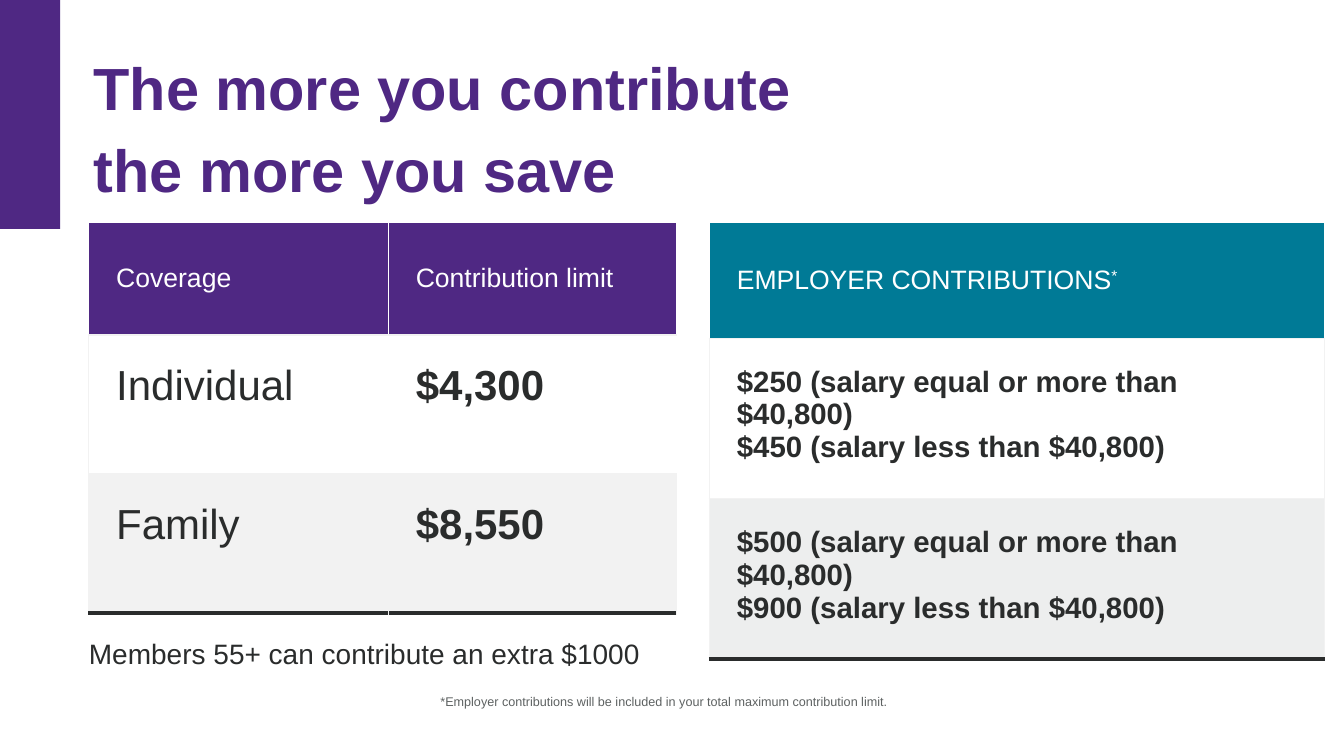
from dataclasses import dataclass

from lxml import etree
from pptx import Presentation
from pptx.dml.color import RGBColor
from pptx.enum.shapes import MSO_SHAPE
from pptx.enum.text import MSO_ANCHOR
from pptx.oxml.ns import qn
from pptx.util import Cm, Pt

RECT = MSO_SHAPE.RECTANGLE
TOP = MSO_ANCHOR.TOP
MIDDLE = MSO_ANCHOR.MIDDLE


@dataclass(frozen=True)
class Theme:
    font: str = "Arial"
    purple: str = "4F2883"
    teal: str = "007A96"
    white: str = "FFFFFF"
    pale: str = "F2F2F2"
    mist: str = "EDEEEE"
    ink: str = "2A2C2C"
    gray: str = "5E6262"
    title: float = 42.5
    large: float = 30
    medium: float = 21
    note: float = 20
    head: float = 19
    small: float = 9


THEME = Theme()


def style(frame, size, color, bold=False):
    for para in frame.paragraphs:
        for run in para.runs:
            font = run.font
            font.name = THEME.font
            font.size = Pt(size)
            font.bold = bold
            font.color.rgb = RGBColor.from_string(color)


def add_bar(slide, width, height):
    bar = slide.shapes.add_shape(RECT, 0, 0, Cm(width), Cm(height))
    bar.shadow.inherit = False
    bar.fill.solid()
    bar.fill.fore_color.rgb = RGBColor.from_string(THEME.purple)
    bar.line.fill.background()


def add_text(slide, box, text, size, color, pads, bold=False, lines=1.0):
    """Add a text box; box is left, top, width, height and pads are side, top."""
    frame = slide.shapes.add_textbox(*map(Cm, box)).text_frame
    frame.word_wrap = True
    frame.margin_left = frame.margin_right = Cm(pads[0])
    frame.margin_top = frame.margin_bottom = Cm(pads[1])
    frame.text = text
    frame.paragraphs[0].line_spacing = lines
    style(frame, size, color, bold)


def add_edge(cell, side, color, width=1):
    props = cell._tc.get_or_add_tcPr()
    line = etree.SubElement(props, qn(f"a:ln{side}"), w=str(Pt(width)))
    fill = etree.SubElement(line, qn("a:solidFill"))
    etree.SubElement(fill, qn("a:srgbClr"), val=color)


def fill_cell(cell, text, fill, edges, anchor):
    """Set text, fill and edges; edges are (side, color, width) in L, R, T, B order."""
    cell.text_frame.text = text
    cell.vertical_anchor = anchor
    cell.margin_left = cell.margin_right = Cm(0.69)
    cell.margin_top = cell.margin_bottom = Cm(0.69)
    for edge in edges:
        add_edge(cell, *edge)
    cell.fill.solid()
    cell.fill.fore_color.rgb = RGBColor.from_string(fill)


def add_grid(slide, left, top, widths, heights, rows, fills, size, bolds):
    """Add a table with a colored head row and a dark line at its foot."""
    shape = slide.shapes.add_table(len(rows), len(widths), Cm(left), Cm(top),
                                   Cm(sum(widths)), Cm(sum(heights)))
    table = shape.table
    for col, width in zip(table.columns, widths):
        col.width = Cm(width)
    for row, height in zip(table.rows, heights):
        row.height = Cm(height)

    white, pale = THEME.white, THEME.pale
    foot = len(rows) - 1
    for i, (texts, fill) in enumerate(zip(rows, fills)):
        for j, text in enumerate(texts):
            cell = table.cell(i, j)
            if i == 0:
                edges = [("L", white), ("R", white), ("T", white), ("B", pale)]
                fill_cell(cell, text, fill, edges, MIDDLE)
                style(cell.text_frame, THEME.head, white)
                continue
            edges = [
                ("L", pale if j == 0 else fill),
                ("R", pale if len(widths) == 1 else fill),
                ("T", pale),
                ("B", THEME.ink, 3) if i == foot else ("B", pale),
            ]
            fill_cell(cell, text, fill, edges, TOP)
            style(cell.text_frame, size, THEME.ink, bolds[j])
    return table


def add_mark(cell, text):
    """Append a raised mark to a head cell."""
    run = cell.text_frame.paragraphs[0].add_run()
    run.text = text
    style(cell.text_frame, THEME.head, THEME.white)
    run._r.get_or_add_rPr().set("baseline", "30000")


def main():
    deck = Presentation()
    deck.slide_width, deck.slide_height = Cm(33.87), Cm(19.05)
    slide = deck.slides.add_slide(deck.slide_layouts[6])

    add_bar(slide, 1.52, 5.77)
    add_text(slide, (2.36, 1.02, 18.29, 3.89),
             "The more you contribute the more you save",
             THEME.title, THEME.purple, (0, 0), bold=True, lines=1.15)

    limits = [
        ("Coverage", "Contribution limit"),
        ("Individual", "$4,300"),
        ("Family", "$8,550"),
    ]
    add_grid(slide, 2.24, 5.6, (7.55, 7.25), (2.84, 3.5, 3.5), limits,
             (THEME.purple, THEME.white, THEME.pale),
             THEME.large, (False, True))
    add_text(slide, (2.24, 15.75, 15.16, 1.19),
             "Members 55+ can contribute an extra $1000",
             THEME.note, THEME.ink, (0, 0.13), lines=1.2)

    shares = [("EMPLOYER CONTRIBUTIONS",)]
    for high, low in ((250, 450), (500, 900)):
        shares.append((f"${high} (salary equal or more than $40,800)\n"
                       f"${low} (salary less than $40,800)",))
    table = add_grid(slide, 17.88, 5.6, (15.5,), (2.92, 4.03, 4.03), shares,
                     (THEME.teal, THEME.white, THEME.mist),
                     THEME.medium, (True,))
    add_mark(table.cell(0, 0), "*")

    add_text(slide, (10.77, 17.3, 12.32, 0.74),
             "*Employer contributions will be included in your total "
             "maximum contribution limit.",
             THEME.small, THEME.gray, (0.33, 0.18))

    deck.save("out.pptx")


if __name__ == "__main__":
    main()
